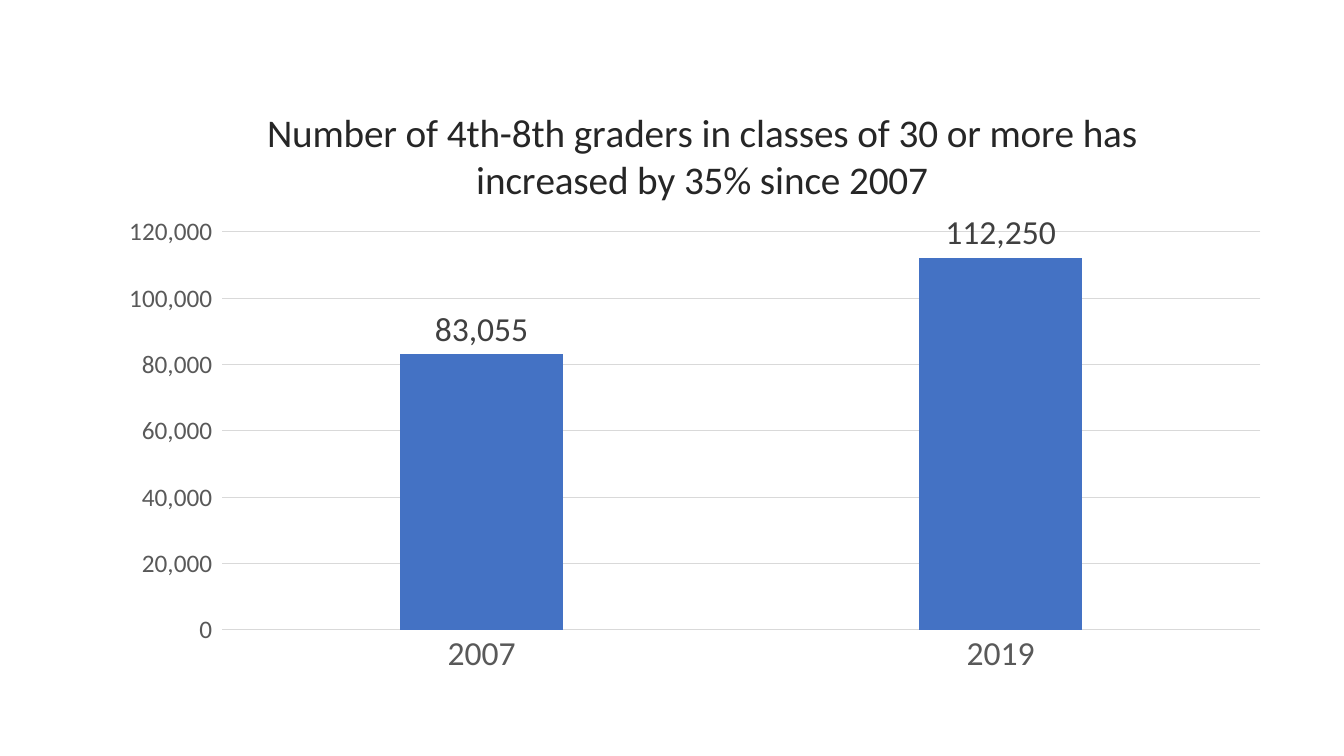
from lxml import etree
from pptx import Presentation, util as u
from pptx.chart.data import CategoryChartData
from pptx.dml.color import RGBColor
from pptx.enum import chart as ch
from pptx.oxml import ns

HEADING = "Number of 4th-8th graders in classes of 30 or more has increased by 35% since 2007"
STUDENTS = {"2007": 83055, "2019": 112250}
COLORS = {"bar": "4472C4", "heading": "262626", "value": "404040", "axis": "595959", "grid": "D9D9D9"}
FRAME = (106, 69, 1177, 620)
PLOT = (222, 232, 1038, 398)
HEADING_AT = (260, 99)
PX = u.Inches(1) / 100.8


def px(length):
    return u.Emu(round(length * PX))


def color(name):
    return RGBColor.from_string(COLORS[name])


def style(font, size, name):
    font.name, font.size, font.bold = "Calibri", u.Pt(size), False
    font.color.rgb = color(name)


def rule(line):
    line.color.rgb = color("grid")
    line.width = u.Pt(0.75)


def place(element, index, box, inner=False):
    for old in element.findall(ns.qn("c:layout")):
        element.remove(old)
    layout = etree.Element(ns.qn("c:layout"))
    manual = etree.SubElement(layout, ns.qn("c:manualLayout"))
    left, top, width, height = FRAME
    parts = [("layoutTarget", "inner")] if inner else []
    parts += [("xMode", "edge"), ("yMode", "edge")]
    offsets = (box[0] - left, box[1] - top, *box[2:])
    for key, length, whole in zip("xywh", offsets, (width, height, width, height)):
        parts.append((key, f"{length / whole:.4f}"))
    for tag, value in parts:
        etree.SubElement(manual, ns.qn("c:" + tag)).set("val", value)
    element.insert(index, layout)


prs = Presentation()
prs.slide_width, prs.slide_height = u.Inches(13.33), u.Inches(7.5)
slide = prs.slides.add_slide(prs.slide_layouts[6])

data = CategoryChartData(number_format="#,##0")
data.categories = list(STUDENTS)
data.add_series("Series 1", list(STUDENTS.values()))
chart = slide.shapes.add_chart(
    ch.XL_CHART_TYPE.COLUMN_CLUSTERED, *map(px, FRAME), data
).chart
chart.has_legend = False
chart.font.name, chart.font.size = "Calibri", u.Pt(10)

heading = chart.chart_title
heading.include_in_layout = False
heading.text_frame.text = HEADING
style(heading.text_frame.paragraphs[0].font, 28, "heading")

years = chart.category_axis
style(years.tick_labels.font, 24, "axis")
years.major_tick_mark = ch.XL_TICK_MARK.NONE
rule(years.format.line)

counts = chart.value_axis
style(counts.tick_labels.font, 18, "axis")
counts.tick_labels.number_format = "#,##0"
counts.tick_labels.number_format_is_linked = False
counts.minimum_scale, counts.maximum_scale, counts.major_unit = 0, 120000, 20000
counts.format.line.fill.background()
rule(counts.major_gridlines.format.line)

bars = chart.plots[0]
bars.vary_by_categories = False
bars.gap_width, bars.overlap = 219, -27
students = bars.series[0]
students.format.fill.solid()
students.format.fill.fore_color.rgb = color("bar")
values = students.data_labels
values.show_value = True
values.position = ch.XL_LABEL_POSITION.OUTSIDE_END
style(values.font, 24, "value")

chart_xml = chart.element
place(chart_xml.find(".//" + ns.qn("c:title")), 1, HEADING_AT)
place(chart_xml.find(".//" + ns.qn("c:plotArea")), 0, PLOT, inner=True)

prs.save("out.pptx")
